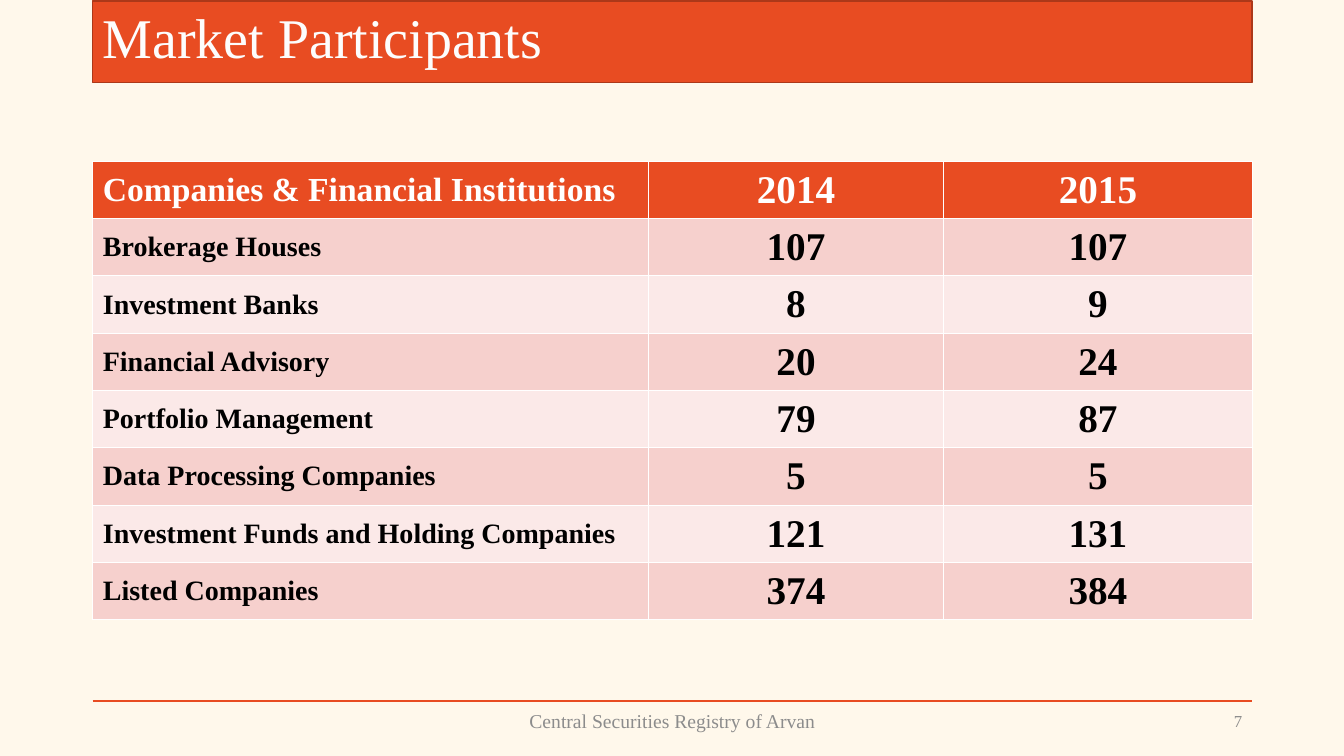
from lxml import etree
from pptx import Presentation
from pptx import util as u
from pptx.dml.color import RGBColor
from pptx.enum import shapes, text
from pptx.oxml.ns import qn

COLORS = {
    "background": "FFF8EB",
    "accent": "E84C22",
    "bar_edge": "AC3819",
    "title": "FDFDFD",
    "white": "FFFFFF",
    "black": "000000",
    "footer": "8C8C8C",
    "odd_row": "F6D0CD",
    "even_row": "FBE9E8",
}
ALIGN = text.PP_ALIGN

participants = [
    ("Companies & Financial Institutions", 2014, 2015),
    ("Brokerage Houses", 107, 107),
    ("Investment Banks", 8, 9),
    ("Financial Advisory", 20, 24),
    ("Portfolio Management", 79, 87),
    ("Data Processing Companies", 5, 5),
    ("Investment Funds and Holding Companies", 121, 131),
    ("Listed Companies", 374, 384),
]


def color(name):
    return RGBColor.from_string(COLORS[name])


def style_text(frame, words, size, color_name, align, bold=False):
    paragraph = frame.paragraphs[0]
    paragraph.text = words
    paragraph.alignment = align
    paragraph.font.name = "Times New Roman"
    paragraph.font.size = u.Pt(size)
    paragraph.font.bold = bold
    paragraph.font.color.rgb = color(color_name)
    return paragraph


presentation = Presentation()
presentation.slide_width = u.Inches(13.33)
presentation.slide_height = u.Inches(7.5)
slide = presentation.slides.add_slide(presentation.slide_layouts[6])
slide.background.fill.solid()
slide.background.fill.fore_color.rgb = color("background")

margin = u.Inches(0.92)
content_width = u.Inches(11.5)
content_right = margin + content_width
footer_top = u.Inches(6.95)

title_bar = slide.shapes.add_shape(
    shapes.MSO_SHAPE.RECTANGLE, margin, u.Inches(0.01), content_width, u.Inches(0.81)
)
title_bar.shadow.inherit = False
title_bar.fill.solid()
title_bar.fill.fore_color.rgb = color("accent")
title_bar.line.color.rgb = color("bar_edge")
title_bar.line.width = u.Pt(1)

footer_rule = slide.shapes.add_connector(
    shapes.MSO_CONNECTOR.STRAIGHT, margin, footer_top, content_right, footer_top
)
footer_rule.line.color.rgb = color("accent")
footer_rule.line.width = u.Pt(1.5)
etree.SubElement(footer_rule._element.spPr, qn("a:effectLst"))

labels = [
    ("Market Participants", 0.92, 0, 11.5, 0.8, 40, "title", ALIGN.LEFT, 0.9),
    ("7", 9.42, 6.95, 3, 0.4, 12, "footer", ALIGN.RIGHT, 1.0),
    ("Central Securities Registry of Arvan", 4.42, 6.95, 4.5, 0.4, 14, "footer", ALIGN.CENTER, 1.0),
]
for words, left, top, width, height, size, color_name, align, spacing in labels:
    label = slide.shapes.add_textbox(*map(u.Inches, (left, top, width, height)))
    label.text_frame.word_wrap = True
    label.text_frame.vertical_anchor = text.MSO_ANCHOR.MIDDLE
    paragraph = style_text(label.text_frame, words, size, color_name, align)
    paragraph.line_spacing = spacing

table = slide.shapes.add_table(
    len(participants), 3, margin, u.Inches(1.6), content_width, u.Inches(4.55)
).table
for column, width in zip(table.columns, (5.51, 2.93, 3.06)):
    column.width = u.Inches(width)

for row_index, row in enumerate(participants):
    is_header = row_index == 0
    fill_name = "accent" if is_header else "odd_row" if row_index % 2 else "even_row"
    for column_index, value in enumerate(row):
        cell = table.cell(row_index, column_index)
        cell.fill.solid()
        cell.fill.fore_color.rgb = color(fill_name)
        cell.vertical_anchor = text.MSO_ANCHOR.MIDDLE
        size = 28 if column_index else 24 if is_header else 20
        align = ALIGN.CENTER if column_index else ALIGN.LEFT
        color_name = "white" if is_header else "black"
        style_text(cell.text_frame, str(value), size, color_name, align, bold=True)

presentation.save("out.pptx")
